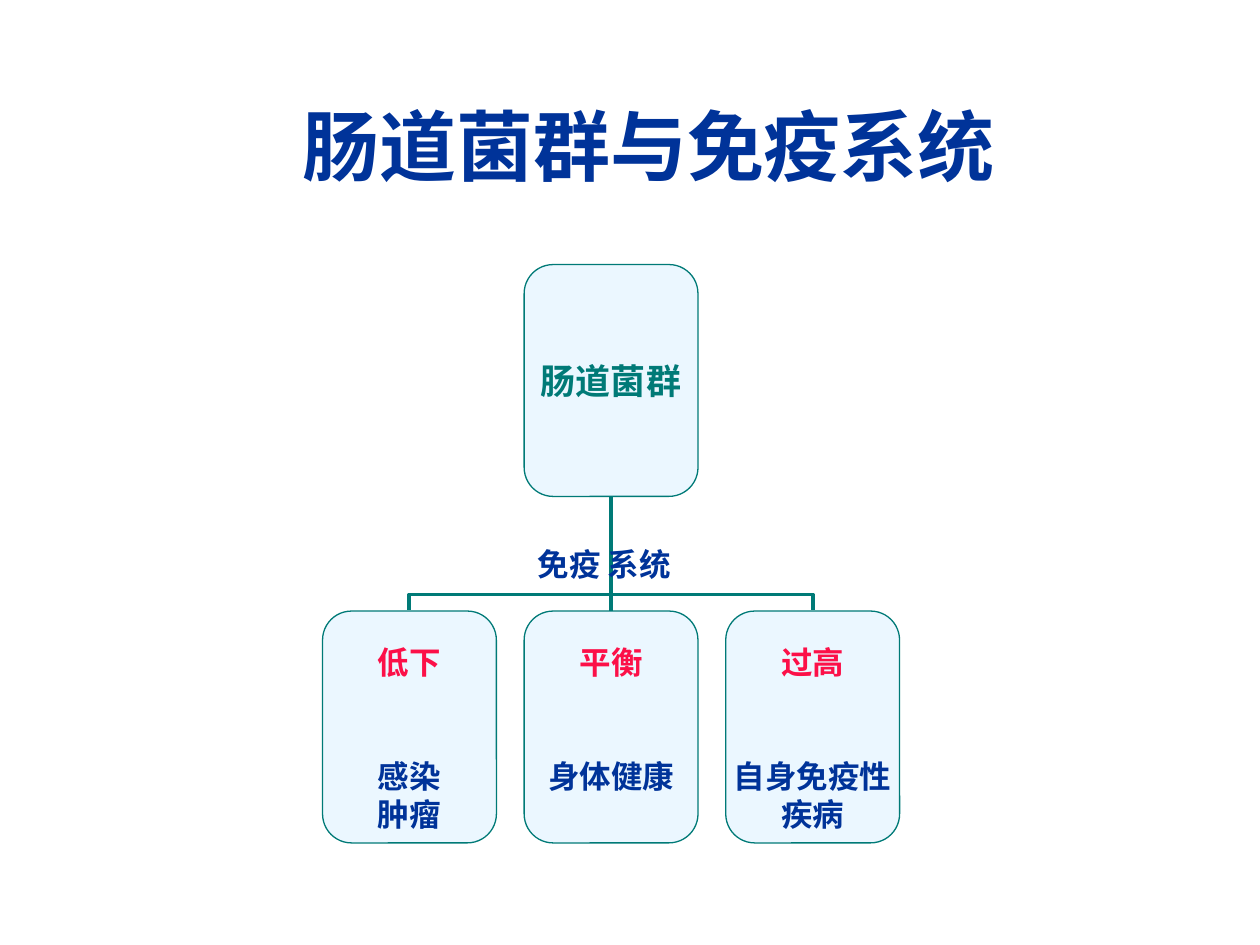
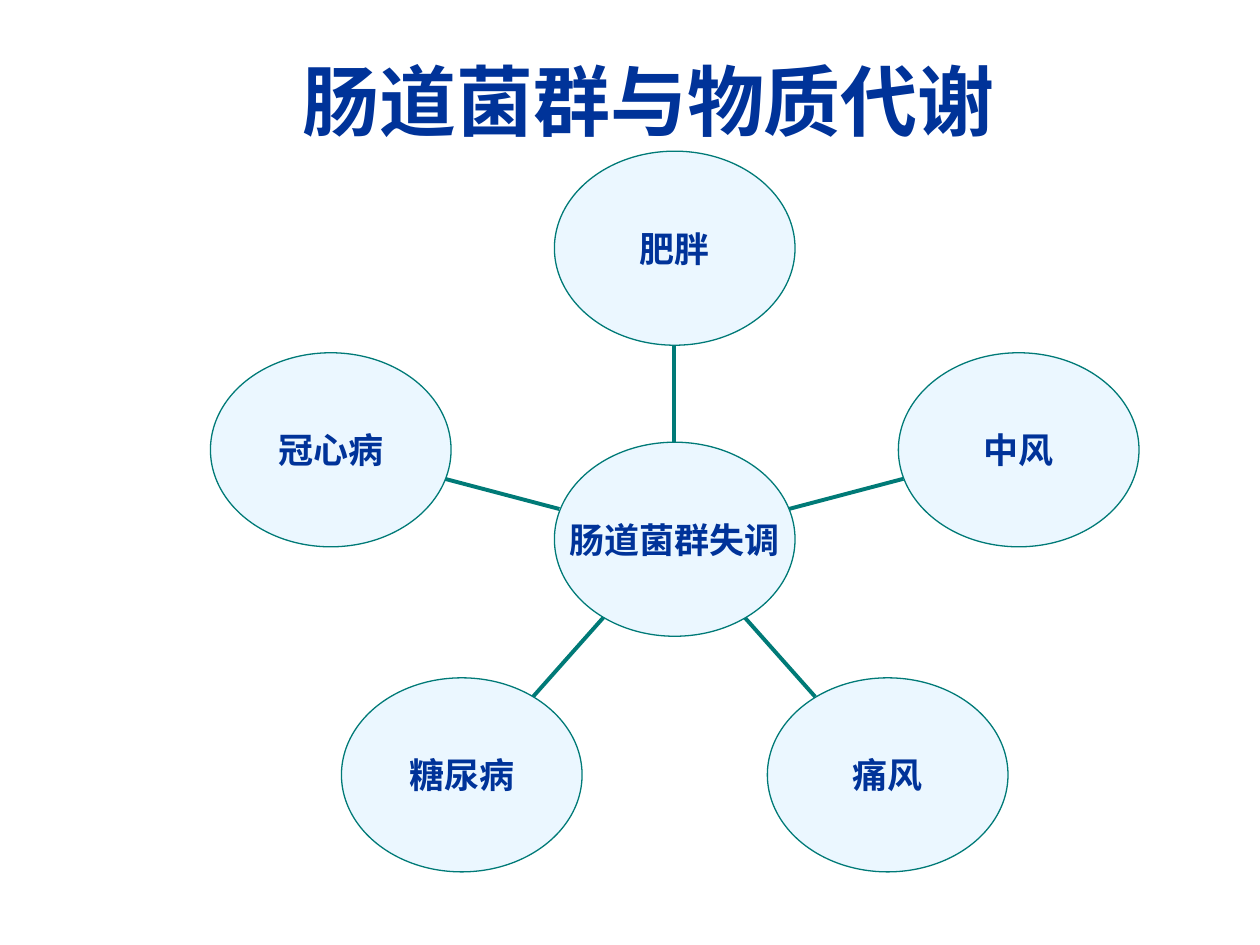
from math import cos, radians, sin

from lxml import etree
from pptx import Presentation
from pptx.dml.color import RGBColor
from pptx.enum.shapes import MSO_CONNECTOR, MSO_SHAPE
from pptx.enum.text import MSO_ANCHOR, MSO_AUTO_SIZE, PP_ALIGN
from pptx.oxml.ns import qn
from pptx.util import Pt

PX = 9144
TITLE_ONLY = 5
STRAIGHT, ELBOW = MSO_CONNECTOR.STRAIGHT, MSO_CONNECTOR.ELBOW
ROUNDED, OVAL = MSO_SHAPE.ROUNDED_RECTANGLE, MSO_SHAPE.OVAL
TOP, MIDDLE = MSO_ANCHOR.TOP, MSO_ANCHOR.MIDDLE
CENTER = PP_ALIGN.CENTER
CJK = "Noto Sans CJK SC"
COLORS = {"navy": "003399", "teal": "007A77", "red": "FC1048", "pale": "EBF7FF"}


def color(name):
    return RGBColor.from_string(COLORS[name])


def write(para, text, size=18, ink="navy", font=CJK, align=CENTER, before=0, line=None):
    para.alignment = align
    para.space_before = Pt(before)
    if line:
        para.line_spacing = Pt(line)
    span = para.add_run()
    span.text = text
    span.font.size = Pt(size)
    span.font.bold = True
    span.font.name = font
    span.font.color.rgb = color(ink)
    etree.SubElement(span.font._element, qn("a:ea"), typeface=CJK)


class Deck:
    def __init__(self):
        self.deck = Presentation()
        self.deck.slide_width = 1000 * PX
        self.deck.slide_height = 750 * PX
        self.page = None

    def add_page(self, title, top, height):
        self.page = self.deck.slides.add_slide(self.deck.slide_layouts[TITLE_ONLY])
        box = self.page.shapes.title
        box.left, box.top, box.width, box.height = 90 * PX, top * PX, 850 * PX, height * PX
        frame = box.text_frame
        frame.auto_size = MSO_AUTO_SIZE.NONE
        frame.vertical_anchor = MIDDLE
        write(frame.paragraphs[0], title, size=44)

    def node(self, kind, left, top, width, height, lines, anchor=MIDDLE, inset=0):
        box = self.page.shapes.add_shape(kind, left * PX, top * PX, width * PX, height * PX)
        box.shadow.inherit = False
        box.fill.solid()
        box.fill.fore_color.rgb = color("pale")
        box.line.color.rgb = color("teal")
        box.line.width = Pt(0.75)
        frame = box.text_frame
        frame.word_wrap = False
        frame.vertical_anchor = anchor
        frame.margin_left = frame.margin_right = frame.margin_bottom = 0
        frame.margin_top = inset * PX
        for index, (text, style) in enumerate(lines):
            para = frame.add_paragraph() if index else frame.paragraphs[0]
            write(para, text, **style)

    def label(self, left, top, width, height, text):
        box = self.page.shapes.add_textbox(left * PX, top * PX, width * PX, height * PX)
        box.text_frame.word_wrap = False
        write(box.text_frame.paragraphs[0], text, align=PP_ALIGN.LEFT)

    def link(self, x1, y1, x2, y2, kind=STRAIGHT):
        link = self.page.shapes.add_connector(kind, x1 * PX, y1 * PX, x2 * PX, y2 * PX)
        link.line.color.rgb = color("teal")
        link.line.width = Pt(2.25)
        etree.SubElement(link._element.spPr, qn("a:effectLst"))
        return link

    def branch(self, x1, y1, x2, y2, bend):
        side = 1 if x1 > x2 else -1
        mid_x, mid_y = (x1 + x2) // 2, (y1 + y2) // 2
        half_rise, half_run = (y1 - y2) // 2, abs(x1 - x2) // 2
        link = self.link(mid_x + side * half_rise, mid_y - half_run,
                         mid_x - side * half_rise, mid_y + half_run, ELBOW)
        shape = link._element.spPr
        shape.find(qn("a:xfrm")).set("rot", str(side * 90 % 360 * 60000))
        geometry = shape.find(qn("a:prstGeom"))
        guides = geometry.find(qn("a:avLst"))
        if guides is None:
            guides = etree.SubElement(geometry, qn("a:avLst"))
        etree.SubElement(guides, qn("a:gd"), name="adj1", fmla=f"val {bend}")


def build_immune_page(deck):
    deck.add_page("肠道菌群与免疫系统", 52, 125)
    width, height, step = 138, 184, 160
    center, root_top, child_top = 485, 210, 485
    root_bottom = root_top + height
    outcomes = [
        ("低下", ["感染", "肿瘤"]),
        ("平衡", ["身体健康"]),
        ("过高", ["自身免疫性", "疾病"]),
    ]
    deck.branch(center + step, child_top, center, root_bottom, 13600)
    deck.link(center, child_top, center, root_bottom)
    deck.branch(center - step, child_top, center, root_bottom, 13600)
    left = center - width // 2
    deck.node(ROUNDED, left, root_top, width, height,
              [("肠道菌群", {"size": 20, "ink": "teal"})])
    for index, (level, effects) in enumerate(outcomes):
        lines = [(level, {"ink": "red", "line": 21.6})]
        lines += [(effect, {"line": 21.6, "before": 0 if row else 43.2})
                  for row, effect in enumerate(effects)]
        deck.node(ROUNDED, left + (index - 1) * step, child_top, width, height,
                  lines, anchor=TOP, inset=19)
    deck.label(417, 428, 134, 40, "免疫 系统")


def build_metabolism_page(deck):
    deck.add_page("肠道菌群与物质代谢", 28, 102)
    width, height = 191, 154
    center_x, center_y, reach_x, reach_y = 535, 428, 287, 231
    diseases = ["肥胖", "中风", "痛风", "糖尿病", "冠心病"]

    def spot(index, share):
        angle = radians(index * 360 / len(diseases))
        return (round(center_x + share * reach_x * sin(angle)),
                round(center_y - share * reach_y * cos(angle)))

    def bubble(x, y, text):
        deck.node(OVAL, x - width // 2, y - height // 2, width, height,
                  [(text, {"size": 20, "font": "Arial"})])

    for index, disease in enumerate(diseases):
        deck.link(*spot(index, 1 / 3), *spot(index, 2 / 3))
        bubble(*spot(index, 1), disease)
    bubble(center_x, center_y, "肠道菌群失调")


def main():
    deck = Deck()
    build_immune_page(deck)
    build_metabolism_page(deck)
    deck.deck.save("out.pptx")


if __name__ == "__main__":
    main()
